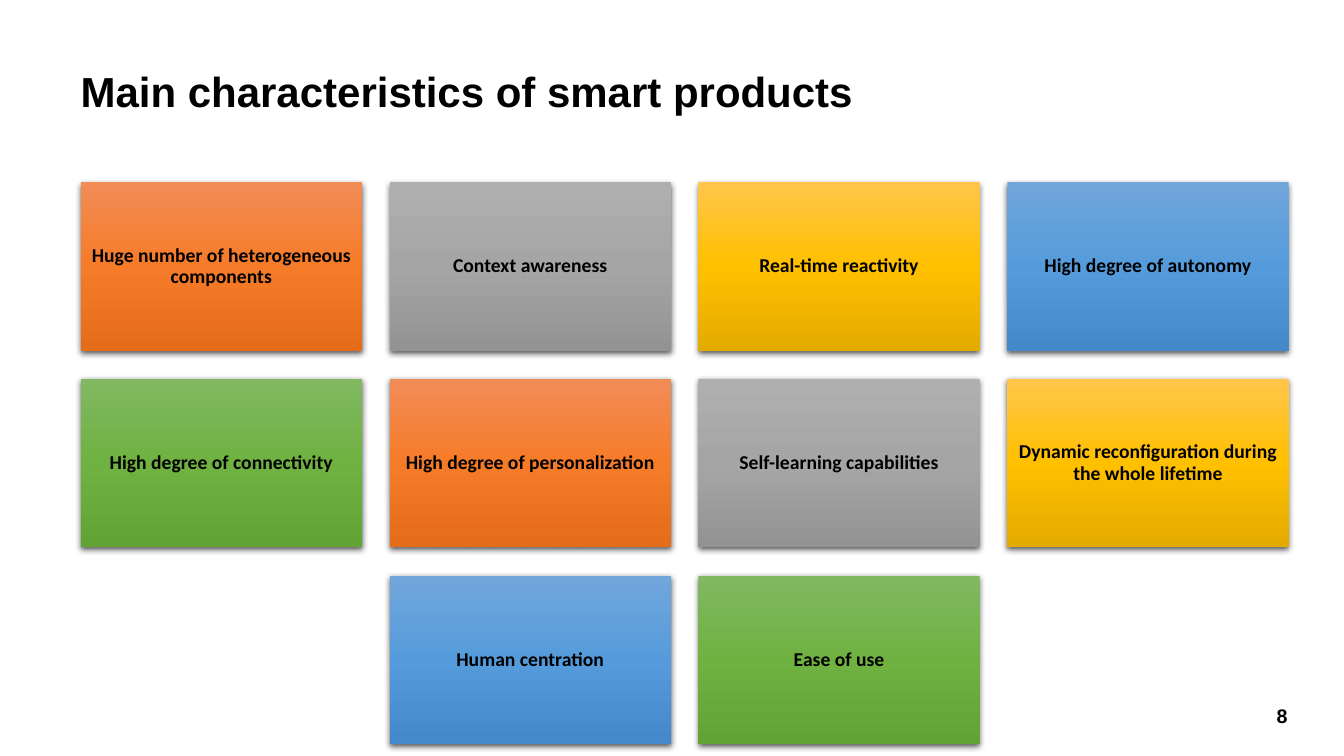
from lxml import etree
from pptx import Presentation
from pptx.dml.color import RGBColor
from pptx.enum.shapes import MSO_SHAPE
from pptx.enum.text import MSO_ANCHOR, MSO_AUTO_SIZE, PP_ALIGN
from pptx.oxml.ns import qn
from pptx.util import Inches, Pt

RECT = MSO_SHAPE.RECTANGLE
LEFT, CENTER = PP_ALIGN.LEFT, PP_ALIGN.CENTER
TOP, MIDDLE, BOTTOM = MSO_ANCHOR.TOP, MSO_ANCHOR.MIDDLE, MSO_ANCHOR.BOTTOM
NO_FIT = MSO_AUTO_SIZE.NONE

COLORS = {
    "text": "000000",
    "shadow": "000000",
    "orange": ("F18C57", "F67B28", "E56C19"),
    "gray": ("AFAFAF", "A5A5A5", "939393"),
    "gold": ("FFC64B", "FFC000", "E3AB00"),
    "blue": ("71A6DB", "559BDB", "448ACA"),
    "green": ("81B861", "6FB242", "62A336"),
}
TILE_COLORS = ["orange", "gray", "gold", "blue", "green"]

CHARACTERISTICS = [
    "Huge number of heterogeneous components",
    "Context awareness",
    "Real-time reactivity",
    "High degree of autonomy",
    "High degree of connectivity",
    "High degree of personalization",
    "Self-learning capabilities",
    "Dynamic reconfiguration during the whole lifetime",
    "Human centration",
    "Ease of use",
]

# Tile grid, in inches
COLUMNS = 4
GRID_LEFT, GRID_RIGHT, GRID_TOP = 0.8, 12.78, 1.81
TILE_W, TILE_H = 2.79, 1.67
STEP_X = (GRID_RIGHT - GRID_LEFT - TILE_W) / (COLUMNS - 1)
STEP_Y = 1.95


def set_text(sp, text, size=14, font="Calibri", align=CENTER, anchor=MIDDLE,
             spacing=0.9, margin=None):
    tf = sp.text_frame
    tf.word_wrap = True
    tf.auto_size = NO_FIT
    tf.vertical_anchor = anchor
    if margin is not None:
        tf.margin_left = tf.margin_right = Inches(margin)
        tf.margin_top = tf.margin_bottom = Inches(margin)
    p = tf.paragraphs[0]
    p.alignment = align
    p.line_spacing = spacing
    r = p.add_run()
    r.text = text
    r.font.name = font
    r.font.size = Pt(size)
    r.font.bold = True
    r.font.color.rgb = RGBColor.from_string(COLORS["text"])


def add_color(parent, color):
    return etree.SubElement(parent, qn("a:srgbClr"), val=color)


def set_gradient(sp, colors):
    """Fill from top to bottom with three evenly spaced stops."""
    grad = etree.Element(qn("a:gradFill"), rotWithShape="1")
    stops = etree.SubElement(grad, qn("a:gsLst"))
    for i, color in enumerate(colors):
        add_color(etree.SubElement(stops, qn("a:gs"), pos=str(i * 50000)), color)
    etree.SubElement(grad, qn("a:lin"), ang="5400000", scaled="0")
    sp._element.spPr.find(qn("a:prstGeom")).addnext(grad)


def set_shadow(sp):
    sp.shadow.inherit = False
    effects = sp._element.spPr.find(qn("a:effectLst"))
    shadow = etree.SubElement(effects, qn("a:outerShdw"), blurRad=str(Pt(4.5)),
                              dist=str(Pt(1.5)), dir="5400000", algn="ctr",
                              rotWithShape="0")
    etree.SubElement(add_color(shadow, COLORS["shadow"]), qn("a:alpha"), val="63000")


def add_tile(slide, x, y, text, colors):
    sp = slide.shapes.add_shape(RECT, Inches(x), Inches(y),
                                Inches(TILE_W), Inches(TILE_H))
    sp.line.fill.background()
    set_gradient(sp, colors)
    set_shadow(sp)
    set_text(sp, text, margin=0.06)


def add_tiles(slide):
    for i, text in enumerate(CHARACTERISTICS):
        row, col = divmod(i, COLUMNS)
        # A short last row is centred under the full ones
        in_row = min(COLUMNS, len(CHARACTERISTICS) - row * COLUMNS)
        x = GRID_LEFT + (col + (COLUMNS - in_row) / 2) * STEP_X
        colors = COLORS[TILE_COLORS[i % len(TILE_COLORS)]]
        add_tile(slide, x, GRID_TOP + row * STEP_Y, text, colors)


def add_title(slide, text):
    sp = slide.shapes.title
    sp.left, sp.top = Inches(0.7), Inches(0.66)
    sp.width, sp.height = Inches(9.82), Inches(0.56)
    set_text(sp, text, size=30, font="Arial", align=LEFT, anchor=TOP)


def add_page_number(slide, number):
    sp = slide.shapes.add_textbox(Inches(12.21), Inches(6.87),
                                  Inches(1.01), Inches(0.4))
    set_text(sp, number, font="Arial", anchor=BOTTOM, spacing=1.0)


def main():
    prs = Presentation()
    prs.slide_width, prs.slide_height = Inches(13.33), Inches(7.5)
    slide = prs.slides.add_slide(prs.slide_layouts[5])

    add_title(slide, "Main characteristics of smart products")
    add_tiles(slide)
    add_page_number(slide, "8")

    prs.save("out.pptx")


if __name__ == "__main__":
    main()
